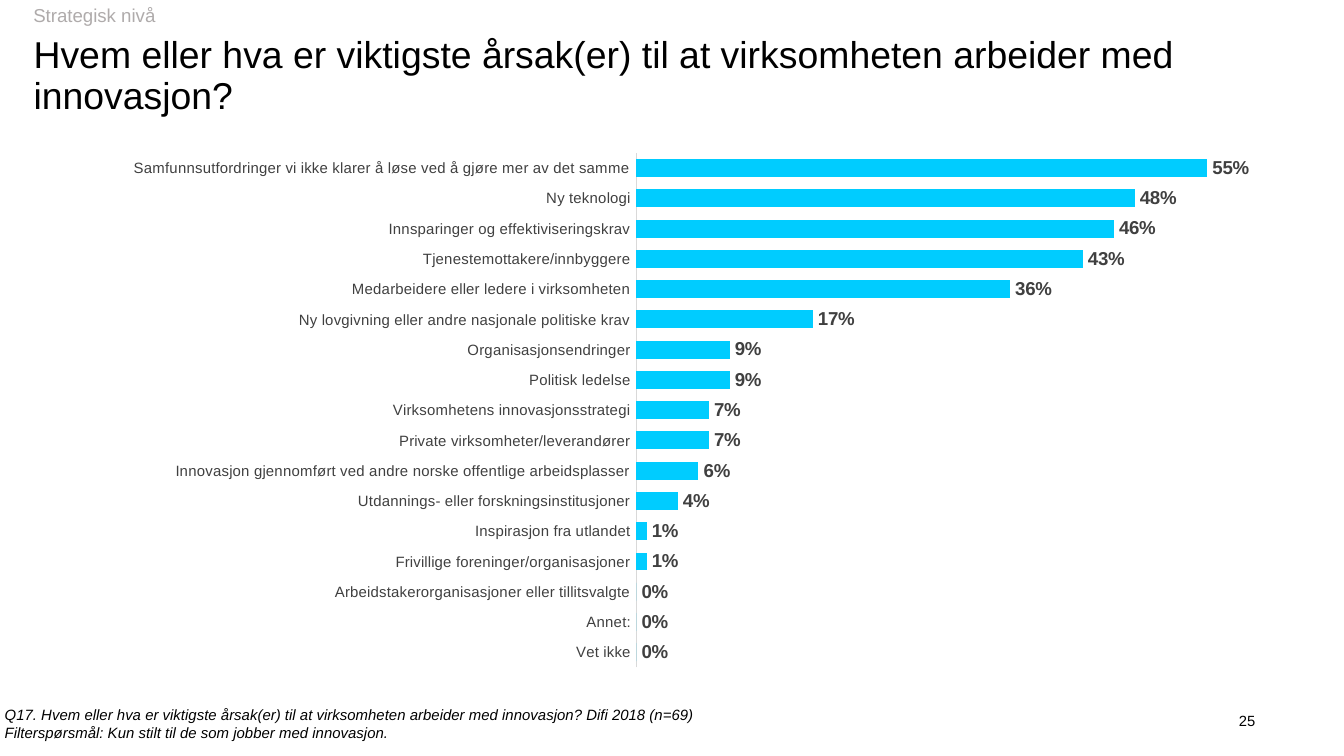
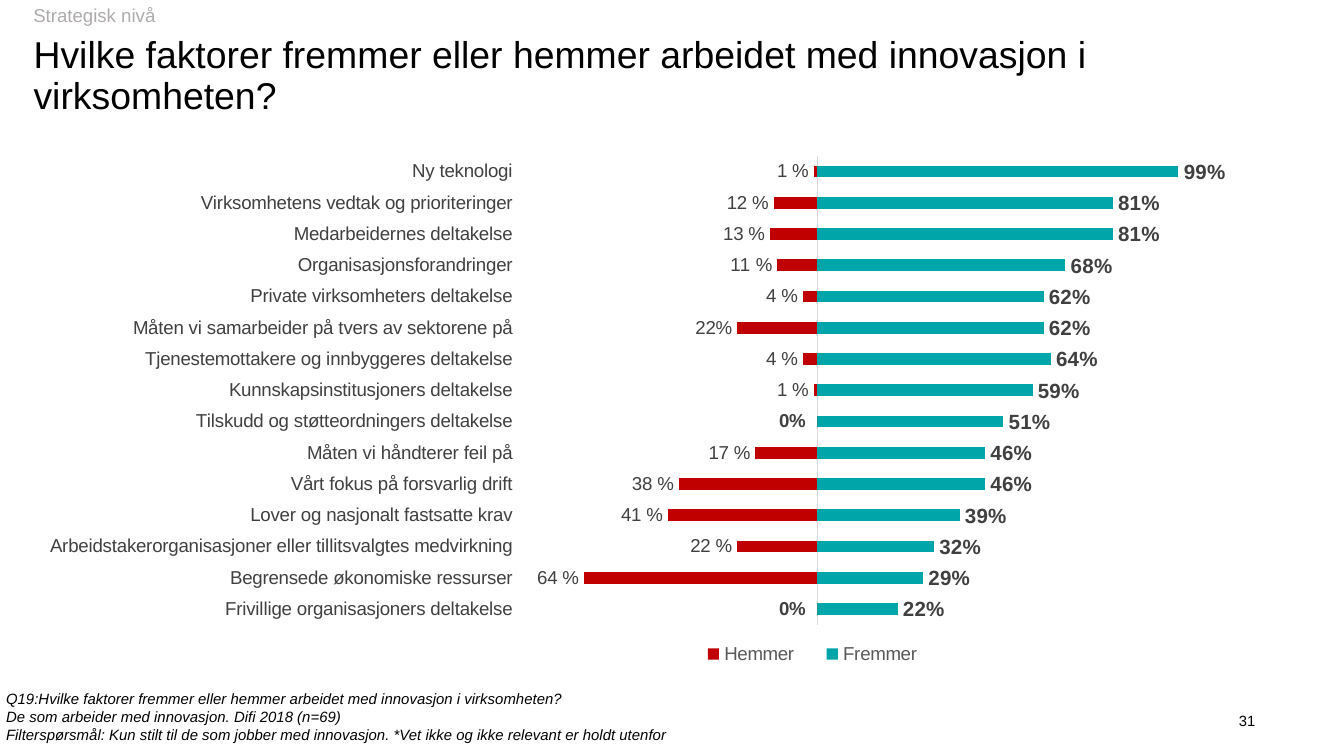
from dataclasses import dataclass
from typing import NamedTuple, Optional

from pptx import Presentation, oxml
from pptx import util as u
from pptx.chart import data as chart_data
from pptx.chart.chart import Chart
from pptx.dml.color import RGBColor
from pptx.enum import chart as ch
from pptx.enum import text
from pptx.oxml import ns
from pptx.slide import Slide

SLIDE_W = u.Inches(10)
SLIDE_H = SLIDE_W * 9 // 16
FONT = "Arial"

BLACK = RGBColor(0x00, 0x00, 0x00)
DARK_GREY = RGBColor(0x40, 0x40, 0x40)
LEGEND_GREY = RGBColor(0x59, 0x59, 0x59)
TAG_GREY = RGBColor(0xAF, 0xAB, 0xAB)
AXIS_GREY = RGBColor(0xD9, 0xD9, 0xD9)
CYAN = RGBColor(0x00, 0xCC, 0xFF)
TEAL = RGBColor(0x00, 0xA5, 0xAA)
RED = RGBColor(0xC0, 0x00, 0x00)


class Box(NamedTuple):
    """Left, top, width and height in percent of the slide."""
    left: float
    top: float
    width: float
    height: float

    def emu(self) -> tuple[int, ...]:
        sides = (SLIDE_W, SLIDE_H, SLIDE_W, SLIDE_H)
        return tuple(int(side * share / 100) for side, share in zip(sides, self))


@dataclass(frozen=True)
class Style:
    size: float
    color: RGBColor = BLACK
    bold: bool = False
    italic: bool = False

    def apply(self, font) -> None:
        font.name, font.size = FONT, u.Pt(self.size)
        font.bold, font.italic = self.bold, self.italic
        font.color.rgb = self.color


@dataclass(frozen=True)
class Measure:
    """One series: its values in percent run from the top bar down."""
    name: str
    percents: list[int]
    color: RGBColor
    label: Style


@dataclass(frozen=True)
class BarChart:
    box: Box
    factors: list[str]
    measures: list[Measure]
    gap: int
    axis_range: tuple[float, float]
    plot: tuple[float, float, float, float]
    axis_style: Style
    overlap: int = 0
    legend: Optional[tuple[float, float, float, float]] = None


@dataclass(frozen=True)
class Page:
    title: str
    title_height: float
    bars: BarChart
    footnote: list[str]
    footnote_box: Box
    number: int


TITLE_BOTTOM = 15.5
TAG_BOX = Box(1.5, 0, 12.4, 4.63)
NUMBER_BOX = Box(90.9, 94.05, 2.5, 2.67)

TITLE = Style(20)
TAG = Style(10, TAG_GREY)
FOOTNOTE = Style(8, italic=True)
NUMBER = Style(7.9)
LEGEND = Style(10, LEGEND_GREY)
HINDER_LABEL = Style(10, DARK_GREY)
BOLD_LABEL = Style(10, DARK_GREY, bold=True)

CAUSES = {
    "Samfunnsutfordringer vi ikke klarer å løse ved å gjøre mer av det samme": 55,
    "Ny teknologi": 48,
    "Innsparinger og effektiviseringskrav": 46,
    "Tjenestemottakere/innbyggere": 43,
    "Medarbeidere eller ledere i virksomheten": 36,
    "Ny lovgivning eller andre nasjonale politiske krav": 17,
    "Organisasjonsendringer": 9,
    "Politisk ledelse": 9,
    "Virksomhetens innovasjonsstrategi": 7,
    "Private virksomheter/leverandører": 7,
    "Innovasjon gjennomført ved andre norske offentlige arbeidsplasser": 6,
    "Utdannings- eller forskningsinstitusjoner": 4,
    "Inspirasjon fra utlandet": 1,
    "Frivillige foreninger/organisasjoner": 1,
    "Arbeidstakerorganisasjoner eller tillitsvalgte": 0,
    "Annet:": 0,
    "Vet ikke": 0,
}

# Factor: (promotes, hinders)
FACTORS = {
    "Ny teknologi": (99, -1),
    "Virksomhetens vedtak og prioriteringer": (81, -12),
    "Medarbeidernes deltakelse": (81, -13),
    "Organisasjonsforandringer": (68, -11),
    "Private virksomheters deltakelse": (62, -4),
    "Måten vi samarbeider på tvers av sektorene på": (62, -22),
    "Tjenestemottakere og innbyggeres deltakelse": (64, -4),
    "Kunnskapsinstitusjoners deltakelse": (59, -1),
    "Tilskudd og støtteordningers deltakelse": (51, 0),
    "Måten vi håndterer feil på": (46, -17),
    "Vårt fokus på forsvarlig drift": (46, -38),
    "Lover og nasjonalt fastsatte krav": (39, -41),
    "Arbeidstakerorganisasjoner eller tillitsvalgtes medvirkning": (32, -22),
    "Begrensede økonomiske ressurser": (29, -64),
    "Frivillige organisasjoners deltakelse": (22, 0),
}
UNSPACED_LABEL = "Måten vi samarbeider på tvers av sektorene på"

PAGES = [
    Page(
        "Hvem eller hva er viktigste årsak(er) til at virksomheten arbeider med innovasjon?",
        9.96,
        BarChart(
            Box(2.5, 18.1, 94.6, 76.8), list(CAUSES),
            [Measure("Series 1", list(CAUSES.values()), CYAN, BOLD_LABEL)],
            gap=70, axis_range=(0, 0.6), plot=(0.474, 0.028, 0.49, 0.886),
            axis_style=Style(8, DARK_GREY)),
        ["Q17. Hvem eller hva er viktigste årsak(er) til at virksomheten arbeider med "
         "innovasjon? Difi 2018 (n=69)",
         "Filterspørsmål: Kun stilt til de som jobber med innovasjon."],
        Box(0.35, 93.35, 94.6, 4.8), 25),
    Page(
        "Hvilke faktorer fremmer eller hemmer arbeidet med innovasjon i virksomheten?",
        8.54,
        BarChart(
            Box(0.6, 15.75, 92.8, 74.1), list(FACTORS),
            [Measure("Fremmer", [p for p, _ in FACTORS.values()], TEAL,
                     Style(11, DARK_GREY, bold=True)),
             Measure("Hemmer", [h for _, h in FACTORS.values()], RED, BOLD_LABEL)],
            gap=165, axis_range=(-0.8, 1.2), plot=(0.415, 0.066, 0.585, 0.837),
            axis_style=Style(10, DARK_GREY), overlap=100,
            legend=(0.54, 0.92, 0.21, 0.07)),
        ["Q19:Hvilke faktorer fremmer eller hemmer arbeidet med innovasjon i virksomheten?",
         "De som arbeider med innovasjon. Difi 2018 (n=69)",
         "Filterspørsmål: Kun stilt til de som jobber med innovasjon. "
         "*Vet ikke og ikke relevant er holdt utenfor"],
        Box(0.45, 91.25, 85.9, 7.11), 31),
]


def add_text(slide: Slide, box: Box, lines: list[str], style: Style,
             anchor=text.MSO_ANCHOR.TOP, align=text.PP_ALIGN.LEFT,
             spacing: float = 1, inset: bool = False) -> None:
    frame = slide.shapes.add_textbox(*box.emu()).text_frame
    frame.word_wrap, frame.vertical_anchor = True, anchor
    if not inset:
        frame.margin_left = frame.margin_right = 0
        frame.margin_top = frame.margin_bottom = 0
    for i, line in enumerate(lines):
        paragraph = frame.add_paragraph() if i else frame.paragraphs[0]
        paragraph.alignment, paragraph.line_spacing = align, spacing
        run = paragraph.add_run()
        run.text = line
        style.apply(run.font)


def set_layout(parent, index: int, inner: bool = False, edge: bool = True,
               **place: float) -> None:
    """Place a chart part by hand, as shares of the chart's size."""
    for old in parent.xpath("c:layout"):
        parent.remove(old)
    target = '<c:layoutTarget val="inner"/>' if inner else ""
    modes = '<c:xMode val="edge"/><c:yMode val="edge"/>' if edge else ""
    values = "".join(f'<c:{key} val="{share}"/>' for key, share in place.items())
    parent.insert(index, oxml.parse_xml(
        f'<c:layout {ns.nsdecls("c")}><c:manualLayout>{target}{modes}{values}'
        '</c:manualLayout></c:layout>'))


def label_hindrances(series, bars: BarChart, measure: Measure) -> None:
    """Show negative values without their sign, and zeros left of the axis."""
    pairs = zip(reversed(bars.factors), reversed(measure.percents))
    for i, (factor, percent) in enumerate(pairs):
        label = series.points[i].data_label
        if percent:
            run = label.text_frame.paragraphs[0].add_run()
            run.text = f"{-percent}%" if factor == UNSPACED_LABEL else f"{-percent} %"
            HINDER_LABEL.apply(run.font)
        else:
            measure.label.apply(label.font)
        label.position = ch.XL_LABEL_POSITION.OUTSIDE_END
        if not percent:
            zero = series.data_labels._element.xpath(f"c:dLbl[c:idx/@val={i}]")[0]
            set_layout(zero, 1, edge=False, x=-0.035, y=0)


def style_axes(chart: Chart, bars: BarChart) -> None:
    values, factors = chart.value_axis, chart.category_axis
    values.minimum_scale, values.maximum_scale = bars.axis_range
    values.has_major_gridlines = values.visible = False
    factors.major_tick_mark = factors.minor_tick_mark = ch.XL_TICK_MARK.NONE
    places = ch.XL_TICK_LABEL_POSITION
    factors.tick_label_position = (
        places.LOW if bars.axis_range[0] < 0 else places.NEXT_TO_AXIS)
    factors.format.line.color.rgb = AXIS_GREY
    factors.format.line.width = u.Pt(0.75)
    bars.axis_style.apply(factors.tick_labels.font)


def add_bars(slide: Slide, bars: BarChart) -> None:
    content = chart_data.CategoryChartData(number_format="0%")
    content.categories = bars.factors[::-1]
    for measure in bars.measures:
        content.add_series(measure.name, [p / 100 for p in reversed(measure.percents)])
    chart = slide.shapes.add_chart(
        ch.XL_CHART_TYPE.BAR_CLUSTERED, *bars.box.emu(), content).chart
    Style(10).apply(chart.font)
    chart.has_title = False
    style_axes(chart, bars)

    plot = chart.plots[0]
    plot.gap_width, plot.overlap = bars.gap, bars.overlap
    plot.vary_by_categories = False
    for series, measure in zip(plot.series, bars.measures):
        series.invert_if_negative = False
        series.format.fill.solid()
        series.format.fill.fore_color.rgb = measure.color
        labels = series.data_labels
        labels.show_value = True
        labels.number_format, labels.number_format_is_linked = "0%", False
        labels.position = ch.XL_LABEL_POSITION.OUTSIDE_END
        measure.label.apply(labels.font)
        if min(measure.percents) < 0:
            label_hindrances(series, bars, measure)

    area = chart.element.xpath(".//c:plotArea")[0]
    set_layout(area, 0, inner=True, **dict(zip("xywh", bars.plot)))
    chart.has_legend = bars.legend is not None
    if bars.legend:
        chart.legend.position = ch.XL_LEGEND_POSITION.BOTTOM
        chart.legend.include_in_layout = False
        LEGEND.apply(chart.legend.font)
        key = chart.element.xpath(".//c:legend")[0]
        set_layout(key, 1, **dict(zip("xywh", bars.legend)))


def add_page(deck, page: Page) -> None:
    slide = deck.slides.add_slide(deck.slide_layouts[6])
    title_box = Box(2.5, TITLE_BOTTOM - page.title_height, 96.7, page.title_height)
    add_text(slide, title_box, [page.title], TITLE,
             anchor=text.MSO_ANCHOR.BOTTOM, spacing=0.9)
    add_bars(slide, page.bars)
    add_text(slide, page.footnote_box, page.footnote, FOOTNOTE)
    add_text(slide, NUMBER_BOX, [str(page.number)], NUMBER,
             anchor=text.MSO_ANCHOR.MIDDLE, align=text.PP_ALIGN.RIGHT)
    add_text(slide, TAG_BOX, ["Strategisk nivå"], TAG, spacing=0.9, inset=True)


def main() -> None:
    deck = Presentation()
    deck.slide_width, deck.slide_height = SLIDE_W, SLIDE_H
    for page in PAGES:
        add_page(deck, page)
    deck.save("out.pptx")


if __name__ == "__main__":
    main()
